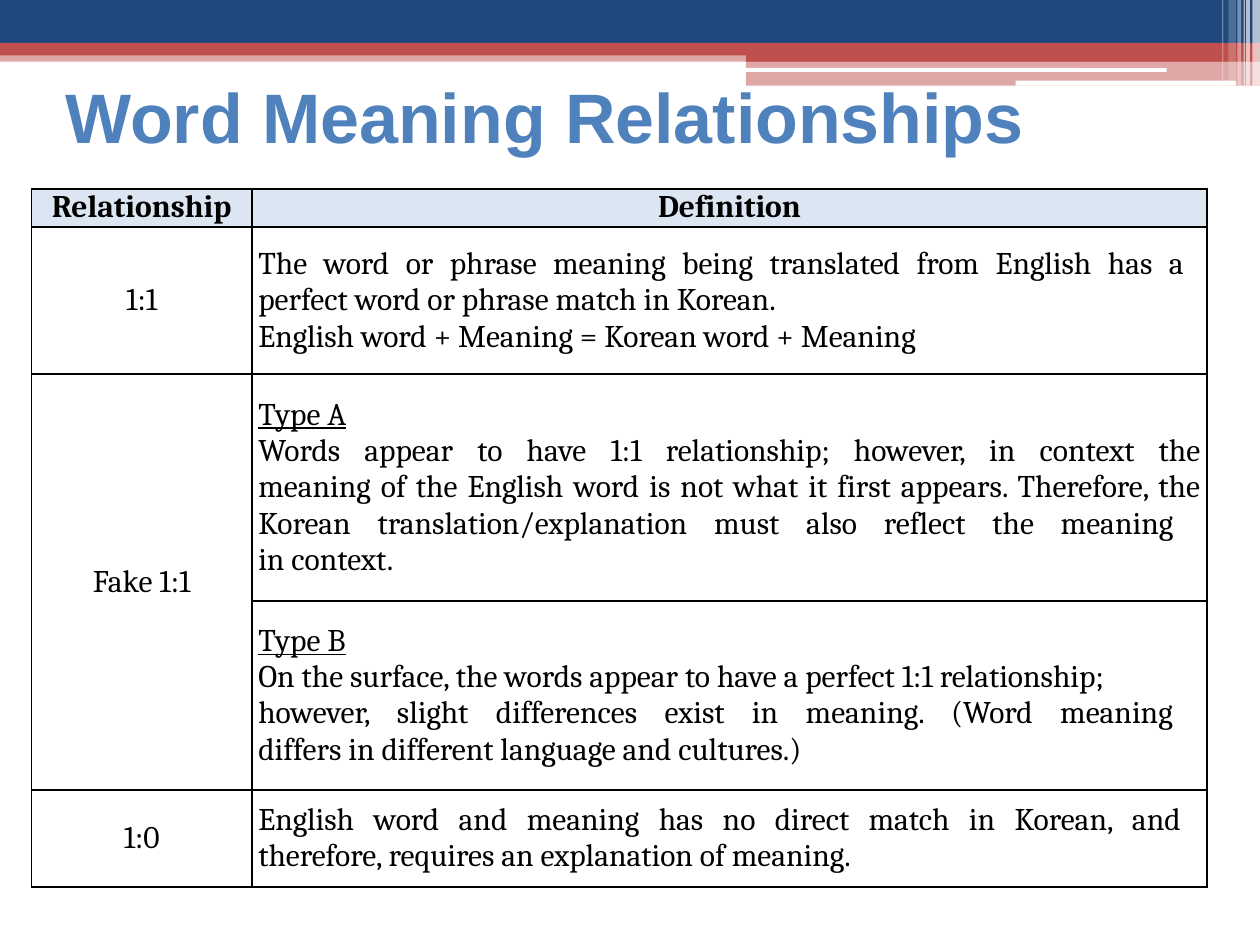
from lxml import etree
from pptx import Presentation
from pptx.dml.color import RGBColor
from pptx.enum.shapes import MSO_SHAPE
from pptx.enum.text import MSO_ANCHOR, MSO_AUTO_SIZE, PP_ALIGN
from pptx.oxml.ns import qn
from pptx.util import Inches, Pt

RECT, ROUNDED = MSO_SHAPE.RECTANGLE, MSO_SHAPE.ROUNDED_RECTANGLE
TOP, MIDDLE = MSO_ANCHOR.TOP, MSO_ANCHOR.MIDDLE
LEFT, CENTER, JUSTIFY = PP_ALIGN.LEFT, PP_ALIGN.CENTER, PP_ALIGN.JUSTIFY

NAVY = RGBColor(0x1F, 0x49, 0x7D)
RED = RGBColor(0xC0, 0x50, 0x4D)
BLUE = RGBColor(0x4F, 0x81, 0xBD)
PALE_BLUE = RGBColor(0xDC, 0xE6, 0xF2)
WHITE = RGBColor(0xFF, 0xFF, 0xFF)
BLACK = RGBColor(0, 0, 0)

SLIDE_W, SLIDE_H = 10, 7.5
TITLE = "Word Meaning Relationships"
TITLE_BOX = (0.42, 0.33, 9, 1.17)

# preset, left, top, width, height, colour, opacity in percent
BANDS = [
    (RECT, 0, 0.4, SLIDE_W, 0.09, RED, 50),
    (RECT, 0, 0, SLIDE_W, 0.34, NAVY, 100),
    (RECT, 0, 0.34, SLIDE_W, 0.1, RED, 100),
    (RECT, 5.92, 0.39, 4.08, 0.1, RED, 100),
    (RECT, 5.92, 0.48, 4.08, 0.2, RED, 50),
    (ROUNDED, 5.91, 0.54, 3.35, 0.03, WHITE, 100),
    (ROUNDED, 8.06, 0.64, 1.75, 0.04, WHITE, 100),
]
# left, width, height, opacity in percent
STRIPES = [
    (9.94, 0.06, 0.68, 65),
    (9.89, 0.03, 0.68, 65),
    (9.87, 0.01, 0.68, 60),
    (9.82, 0.03, 0.68, 40),
    (9.75, 0.06, 0.64, 20),
    (9.7, 0.01, 0.64, 30),
]

TABLE_LEFT, TABLE_TOP = 0.25, 1.5
COLUMN_WIDTHS = [1.75, 7.58]
HEADERS = ["Relationship", "Definition"]
HEADER_HEIGHT = 0.3
# height, relationship (None continues the one above), underlined type, definition
# paragraphs; \v is a line break
ROWS = [
    (1.17, "1:1", None, [
        "The word or phrase meaning being translated from English has a \v"
        "perfect word or phrase match in Korean.",
        "English word + Meaning = Korean word + Meaning"]),
    (1.8, "Fake 1:1", "Type A", [
        "Words appear to have 1:1 relationship; however, in context the\v"
        "meaning of the English word is not what it first appears. Therefore, the "
        "Korean translation/explanation must also reflect the meaning \vin context."]),
    (1.5, None, "Type B", [
        "On the surface, the words appear to have a perfect 1:1 relationship; ",
        "however, slight differences exist in meaning. (Word meaning \v"
        "differs in different language and cultures.)"]),
    (0.77, "1:0", None, [
        "English word and meaning has no direct match in Korean, and \v"
        "therefore, requires an explanation of meaning."]),
]


def write(paragraph, text, font="Cambria", size=18, color=BLACK, bold=False,
          underline=False, align=LEFT):
    paragraph.text = text
    paragraph.alignment = align
    for run in paragraph.runs:
        run.font.name = font
        run.font.size = Pt(size)
        run.font.color.rgb = color
        run.font.bold = bold
        run.font.underline = underline


def add_band(slide, preset, left, top, width, height, color, opacity):
    """Add a decorative bar behind the title."""
    band = slide.shapes.add_shape(
        preset, Inches(left), Inches(top), Inches(width), Inches(height))
    band.shadow.inherit = False
    band.line.fill.background()
    band.fill.solid()
    band.fill.fore_color.rgb = color
    if opacity < 100:
        clr = band.element.spPr.find(f"{qn('a:solidFill')}/{qn('a:srgbClr')}")
        etree.SubElement(clr, qn("a:alpha"), val=str(opacity * 1000))
    slide.shapes.title.element.addprevious(band.element)


def format_cell(cell, fill=None, anchor=MIDDLE):
    cell.margin_left = cell.margin_right = Inches(0.05)
    cell.margin_top = cell.margin_bottom = 0
    cell.vertical_anchor = anchor
    properties = cell._tc.get_or_add_tcPr()
    for side in ("lnL", "lnR", "lnT", "lnB"):
        border = etree.SubElement(properties, qn(f"a:{side}"), w=str(Pt(1)))
        solid = etree.SubElement(border, qn("a:solidFill"))
        etree.SubElement(solid, qn("a:srgbClr"), val=str(BLACK))
    if fill is None:
        cell.fill.background()
    else:
        cell.fill.solid()
        cell.fill.fore_color.rgb = fill


def add_title(slide):
    title = slide.shapes.title
    title.left, title.top, title.width, title.height = map(Inches, TITLE_BOX)
    frame = title.text_frame
    frame.auto_size = MSO_AUTO_SIZE.NONE
    frame.word_wrap = True
    frame.vertical_anchor = MIDDLE
    write(frame.paragraphs[0], TITLE, font="Arial", size=40, color=BLUE, bold=True)


def add_relationship_table(slide):
    heights = [HEADER_HEIGHT] + [row[0] for row in ROWS]
    table = slide.shapes.add_table(
        len(heights), len(COLUMN_WIDTHS), Inches(TABLE_LEFT), Inches(TABLE_TOP),
        Inches(sum(COLUMN_WIDTHS)), Inches(sum(heights))).table
    table.horz_banding = False
    table.first_row = False
    for column, width in zip(table.columns, COLUMN_WIDTHS):
        column.width = Inches(width)
    for row, height in zip(table.rows, heights):
        row.height = Inches(height)

    for col, header in enumerate(HEADERS):
        cell = table.cell(0, col)
        format_cell(cell, PALE_BLUE, TOP)
        write(cell.text_frame.paragraphs[0], header, bold=True, align=CENTER)

    for index, (_, relationship, kind, definition) in enumerate(ROWS, start=1):
        label, body = table.cell(index, 0), table.cell(index, 1)
        format_cell(label)
        format_cell(body)
        if relationship is None:
            table.cell(index - 1, 0).merge(label)
        else:
            write(label.text_frame.paragraphs[0], relationship, align=CENTER)
        lines = [kind] + definition if kind else definition
        for number, line in enumerate(lines):
            frame = body.text_frame
            paragraph = frame.add_paragraph() if number else frame.paragraphs[0]
            write(paragraph, line, underline=line == kind, align=JUSTIFY)


def main():
    deck = Presentation()
    deck.slide_width, deck.slide_height = Inches(SLIDE_W), Inches(SLIDE_H)
    slide = deck.slides.add_slide(deck.slide_layouts.get_by_name("Title Only"))
    for band in BANDS:
        add_band(slide, *band)
    for left, width, height, opacity in STRIPES:
        add_band(slide, RECT, left, 0, width, height, WHITE, opacity)
    add_title(slide)
    add_relationship_table(slide)
    deck.save("out.pptx")


if __name__ == "__main__":
    main()
